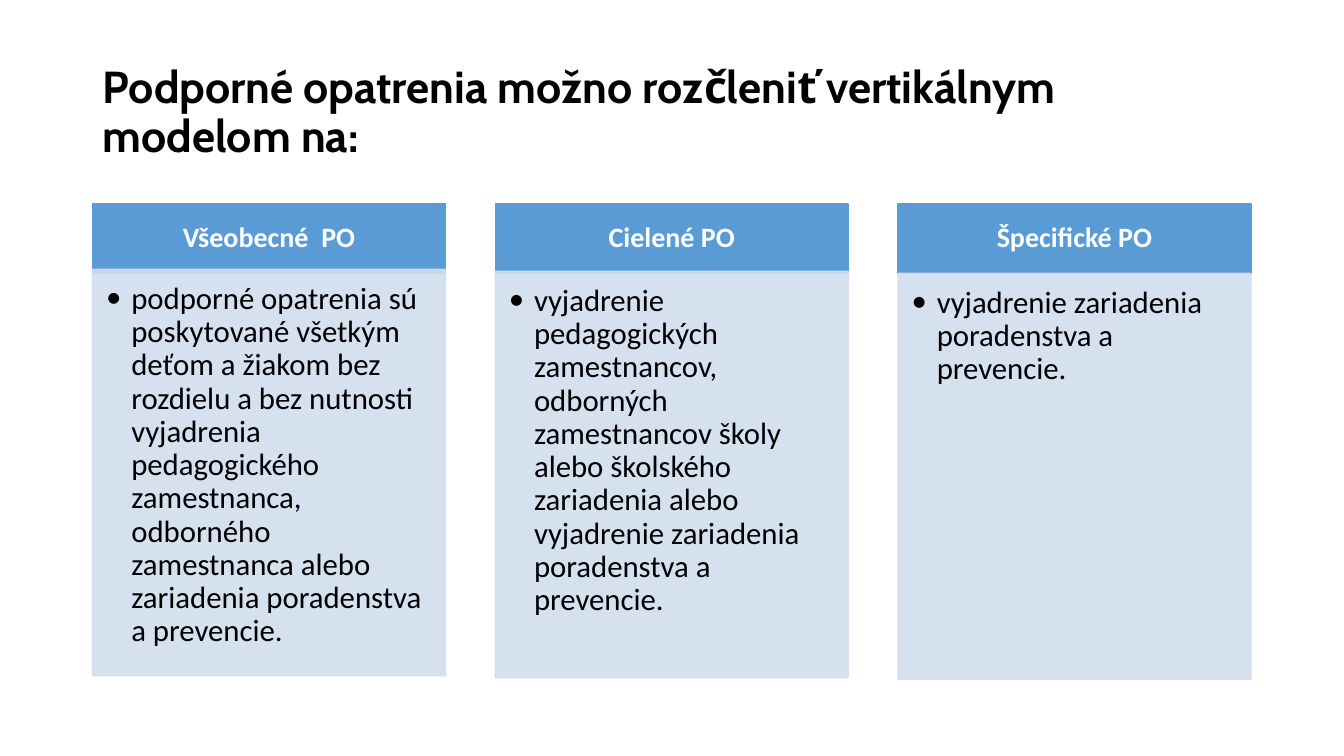
from lxml.etree import SubElement
from pptx import Presentation
from pptx.dml.color import RGBColor
from pptx.enum.shapes import MSO_SHAPE
from pptx.enum.text import MSO_ANCHOR, MSO_AUTO_SIZE, PP_ALIGN
from pptx.oxml.ns import qn
from pptx.util import Pt

BLUE, PALE = "5B9BD5", "D2DEEF"
LEFT, STEP, WIDTH = 66.2, 287.65, 252
COLUMNS = [
    ("Všeobecné  PO",
     "podporné opatrenia sú poskytované všetkým deťom a žiakom bez rozdielu "
     "a bez nutnosti vyjadrenia pedagogického zamestnanca, odborného "
     "zamestnanca alebo zariadenia poradenstva a prevencie."),
    ("Cielené PO",
     "vyjadrenie pedagogických zamestnancov, odborných zamestnancov školy "
     "alebo školského zariadenia alebo vyjadrenie zariadenia poradenstva "
     "a prevencie."),
    ("Špecifické PO",
     "vyjadrenie zariadenia poradenstva a prevencie."),
]


def color(code):
    return RGBColor.from_string(code)


def write(shape, text, size=20, font="Calibri", ink="000000", bold=False,
          align=PP_ALIGN.LEFT, anchor=MSO_ANCHOR.MIDDLE,
          inset=(7.2, 3.6, 7.2, 3.6)):
    """Fill a shape with one formatted paragraph and return it."""
    frame = shape.text_frame
    frame.word_wrap = True
    frame.auto_size = MSO_AUTO_SIZE.NONE
    frame.vertical_anchor = anchor
    (frame.margin_left, frame.margin_top,
     frame.margin_right, frame.margin_bottom) = map(Pt, inset)
    para = frame.paragraphs[0]
    para.alignment = align
    para.line_spacing = 0.9
    para.space_before = Pt(0)
    run = para.add_run()
    run.text = text
    run.font.size = Pt(size)
    run.font.name = font
    run.font.bold = bold
    run.font.color.rgb = color(ink)
    return para


class Deck:
    def __init__(self, slide):
        self.slide = slide
        self.bodies = [p for p in slide.placeholders
                       if p.placeholder_format.idx in (1, 2, 3, 4)]

    def place(self, shape, left, top, width, height):
        shape.left, shape.top = Pt(left), Pt(top)
        shape.width, shape.height = Pt(width), Pt(height)

    def paint(self, shape, code, alpha=100):
        shape.fill.solid()
        shape.fill.fore_color.rgb = color(code)
        shape.line.color.rgb = color(code)
        shape.line.width = Pt(1)
        if alpha < 100:
            for tint in shape.element.spPr.iter(qn("a:srgbClr")):
                SubElement(tint, qn("a:alpha"), val=str(alpha * 1000))

    def title(self, text, *box):
        shape = self.slide.shapes.title
        self.place(shape, *box)
        write(shape, text, size=32, font="Cabin", bold=True)

    def header(self, text, *box):
        shape = self.slide.shapes.add_shape(MSO_SHAPE.RECTANGLE, *map(Pt, box))
        shape.shadow.inherit = False
        self.paint(shape, BLUE)
        write(shape, text, ink="FFFFFF", bold=True, align=PP_ALIGN.CENTER,
              inset=(11.5, 6.5, 11.5, 6.5))

    def list(self, text, *box):
        shape = self.bodies.pop(0)
        self.place(shape, *box)
        self.paint(shape, PALE, alpha=90)
        para = write(shape, text, size=22, anchor=MSO_ANCHOR.TOP,
                     inset=(9.6, 9.6, 12.2, 13.7))
        # Hanging bullet
        props = para._p.get_or_add_pPr()
        props.set("marL", str(Pt(18)))
        props.set("indent", str(-Pt(18)))
        SubElement(props, qn("a:buFont"), typeface="Calibri")
        SubElement(props, qn("a:buChar"), char="•")
        # Bring the list in front of its header
        self.slide.shapes.element.append(shape.element)

    def clean(self):
        for shape in self.bodies:
            self.slide.shapes.element.remove(shape.element)


def main():
    show = Presentation()
    show.slide_width, show.slide_height = Pt(960), Pt(540)
    deck = Deck(show.slides.add_slide(show.slide_layouts[4]))

    # Title
    deck.title("Podporné opatrenia možno rozčleniť vertikálnym modelom na:",
               LEFT, 28.8, 828, 104.4)

    # Three columns, each list a little lower than the one before
    for i, (head, body) in enumerate(COLUMNS):
        left = LEFT + i * STEP
        deck.header(head, left, 145.6, WIDTH, 49.7)
        deck.list(body, left, 192.4 + i * 1.4, WIDTH, 290.2)

    deck.clean()
    show.save("out.pptx")


if __name__ == "__main__":
    main()
